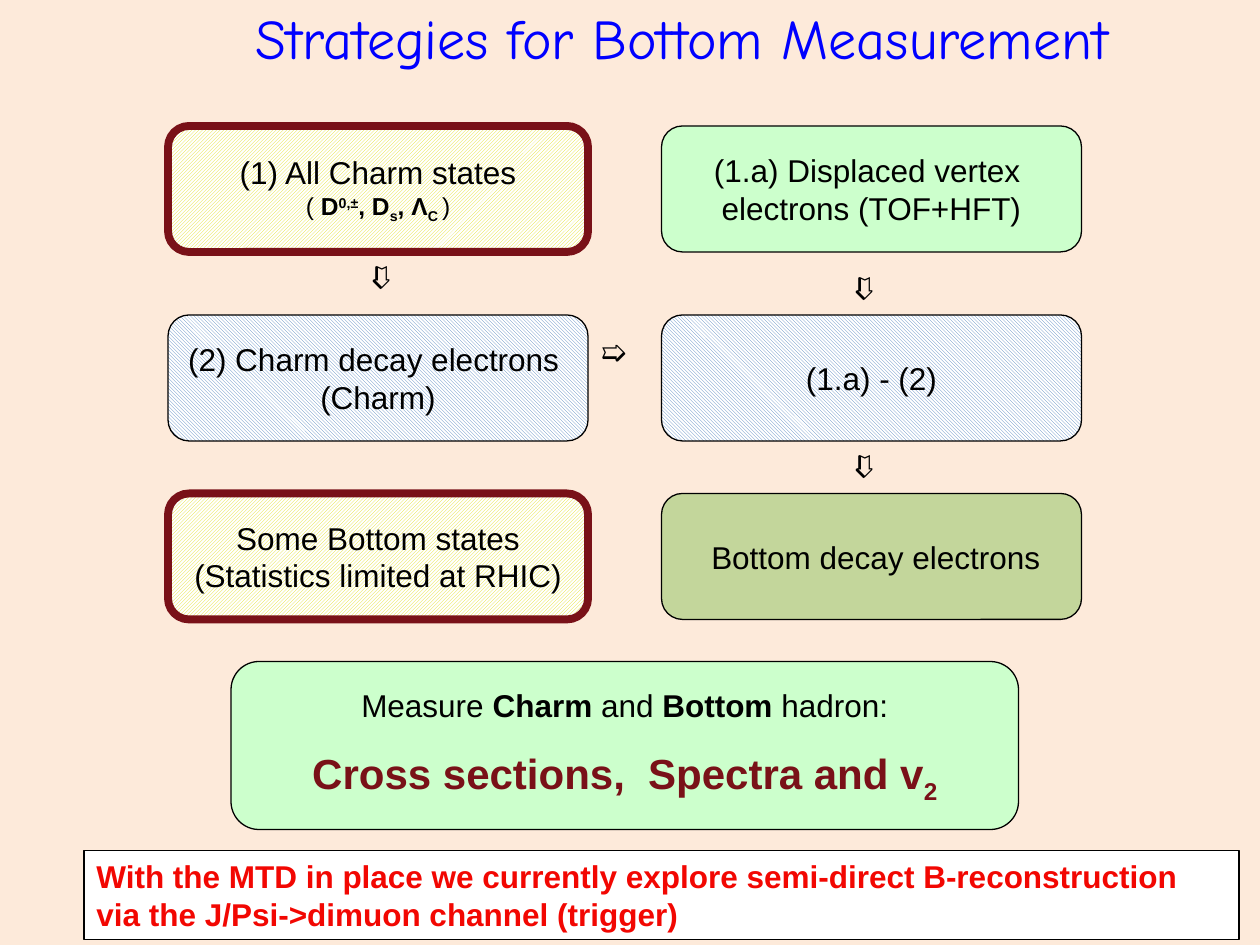
from pptx import Presentation
from pptx.dml.color import RGBColor
from pptx.enum.dml import MSO_PATTERN as PATTERN
from pptx.enum.shapes import MSO_SHAPE as SHAPE
from pptx.enum.text import MSO_ANCHOR as ANCHOR, MSO_AUTO_SIZE as AUTO, PP_ALIGN as ALIGN
from pptx.util import Inches, Pt

COLORS = {
    "background": "FDEADA", "title": "0000FF", "text": "000000", "white": "FFFFFF",
    "mint": "CCFFCC", "olive": "C3D69B", "yellow": "E3DF1C", "blue": "4F81BD",
    "maroon": "791118", "red": "F20702",
}
HATCHES = {"yellow": PATTERN.LIGHT_UPWARD_DIAGONAL, "blue": PATTERN.LIGHT_DOWNWARD_DIAGONAL}
COLS, ROWS = 120, 90

# Flow grid, in columns and rows
LEFT, RIGHT = 16, 63
TOP, MIDDLE, BOTTOM = 12, 30, 47
BOX_W, BOX_H = 40, 12


def rgb(name):
    return RGBColor.from_string(COLORS[name])


class Deck:
    """Holds the style and the current slide; lengths are grid columns and rows."""

    def __init__(self, width=10, height=7.5, font="Arial", size=18):
        self.prs = Presentation()
        self.prs.slide_width, self.prs.slide_height = Inches(width), Inches(height)
        self.col, self.row = Inches(width) / COLS, Inches(height) / ROWS
        self.font, self.size = font, size

    def add_slide(self, background):
        self.slide = self.prs.slides.add_slide(self.prs.slide_layouts[6])
        fill = self.slide.background.fill
        fill.solid()
        fill.fore_color.rgb = rgb(background)

    def place(self, x, y, w, h):
        return [round(v) for v in (x * self.col, y * self.row, w * self.col, h * self.row)]

    def paragraph(self, p, runs, align=ALIGN.CENTER, size=None, color="text",
                  bold=False, font=None, before=0):
        """Fill p with runs: plain strings or (text, bold, baseline percent)."""
        p.alignment, p.space_before = align, Pt(before)
        p.font.name, p.font.size = font or self.font, Pt(size or self.size)
        p.font.bold, p.font.color.rgb = bold, rgb(color)
        for run in [runs] if isinstance(runs, str) else runs:
            text, strong, baseline = (run, None, 0) if isinstance(run, str) else run
            r = p.add_run()
            r.text, r.font.bold = text, strong
            if baseline:
                r._r.get_or_add_rPr().set("baseline", str(baseline * 1000))

    def fill_text(self, sp, paragraphs, wrap=False, anchor=ANCHOR.MIDDLE):
        """Each paragraph is its runs, or a (runs, style dict) pair."""
        tf = sp.text_frame
        tf.word_wrap, tf.vertical_anchor = wrap, anchor
        for i, item in enumerate(paragraphs):
            runs, style = item if isinstance(item, tuple) else (item, {})
            self.paragraph(tf.add_paragraph() if i else tf.paragraphs[0], runs, **style)

    def box(self, x, y, w, h, fill, paragraphs, line="text", weight=0.75,
            shape=SHAPE.ROUNDED_RECTANGLE, wrap=False):
        sp = self.slide.shapes.add_shape(shape, *self.place(x, y, w, h))
        sp.shadow.inherit = False
        if fill in HATCHES:
            sp.fill.patterned()
            sp.fill.pattern = HATCHES[fill]
            sp.fill.fore_color.rgb, sp.fill.back_color.rgb = rgb(fill), rgb("white")
        else:
            sp.fill.solid()
            sp.fill.fore_color.rgb = rgb(fill)
        sp.line.color.rgb, sp.line.width = rgb(line), Pt(weight)
        self.fill_text(sp, paragraphs, wrap)

    def text(self, x, y, w, h, paragraphs, wrap=True, anchor=ANCHOR.MIDDLE):
        sp = self.slide.shapes.add_textbox(*self.place(x, y, w, h))
        self.fill_text(sp, paragraphs, wrap, anchor)
        return sp

    def arrow(self, x, y, rotation=0):
        style = {"align": ALIGN.LEFT}
        sp = self.text(x, y, 5.9, 6, [("➯", style)], wrap=False, anchor=ANCHOR.TOP)
        sp.text_frame.auto_size = AUTO.SHAPE_TO_FIT_TEXT
        sp.rotation = rotation


def main():
    deck = Deck()
    deck.add_slide("background")
    deck.text(14, 0, 102, 7, [("Strategies for Bottom Measurement",
                               {"size": 32, "color": "title", "font": "Comic Neue"})])

    charm_states = [
        "( ", ("D", True, 0), ("0,±", True, 30), (", D", True, 0), ("s", True, -25),
        (", Λ", True, 0), ("C ", True, -25), ")",
    ]
    framed = {"line": "maroon", "weight": 4.5}
    flow = [
        (LEFT, TOP, "yellow", ["(1) All Charm states", (charm_states, {"size": 14})], framed),
        (RIGHT, TOP, "mint", ["(1.a) Displaced vertex ", "electrons (TOF+HFT)"], {}),
        (LEFT, MIDDLE, "blue", ["(2) Charm decay electrons ", "(Charm)"], {}),
        (RIGHT, MIDDLE, "blue", ["(1.a) - (2)"], {}),
        (LEFT, BOTTOM, "yellow", ["Some Bottom states", "(Statistics limited at RHIC)"], framed),
        (RIGHT, BOTTOM, "olive", [" Bottom decay electrons"], {}),
    ]
    for x, y, fill, paragraphs, outline in flow:
        deck.box(x, y, BOX_W, BOX_H, fill, paragraphs, **outline)

    deck.arrow(LEFT + BOX_W, MIDDLE + 1)
    for x, y in [(33, 24), (79, 25), (79, 42)]:
        deck.arrow(x, y, rotation=90)

    deck.box(22, 63, 75, 16, "mint", [
        ["Measure ", ("Charm", True, 0), " and ", ("Bottom", True, 0), " hadron:"],
        (["Cross sections,  Spectra and v", ("2", True, -25)],
         {"size": 24, "color": "maroon", "bold": True, "before": 14}),
    ])
    deck.box(8, 81, 110, 8.5, "white", [
        ("With the MTD in place we currently explore semi-direct B-reconstruction "
         "via the J/Psi->dimuon channel (trigger)",
         {"align": ALIGN.LEFT, "color": "red", "bold": True}),
    ], shape=SHAPE.RECTANGLE, wrap=True)
    deck.prs.save("out.pptx")


if __name__ == "__main__":
    main()
